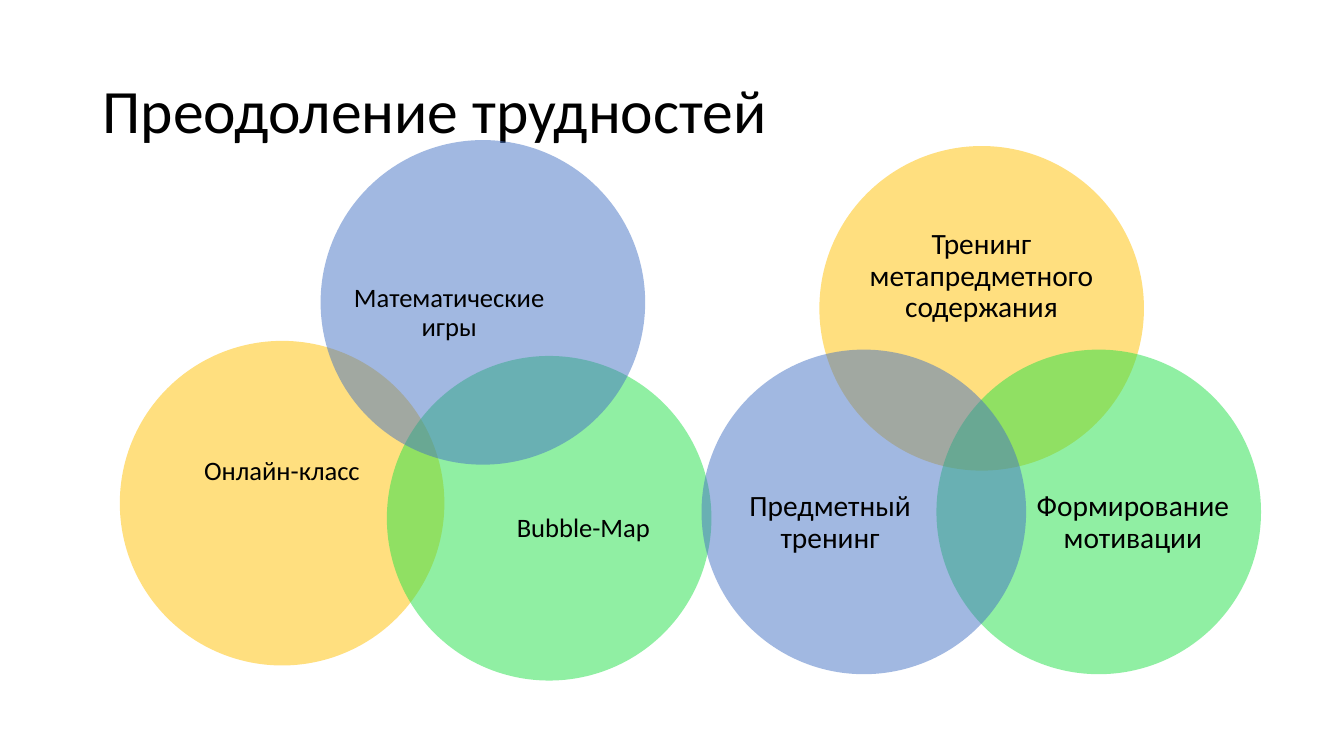
from lxml import etree
from pptx import Presentation
from pptx.dml.color import RGBColor
from pptx.enum.shapes import MSO_SHAPE
from pptx.enum.text import MSO_ANCHOR, PP_ALIGN
from pptx.oxml.ns import qn
from pptx.util import Cm, Pt

ELLIPSE = MSO_SHAPE.OVAL
MIDDLE = MSO_ANCHOR.MIDDLE
LEFT, CENTER = PP_ALIGN.LEFT, PP_ALIGN.CENTER

FONT = "Calibri"
BLACK, YELLOW, GREEN, BLUE = "000000", "FFC000", "23E148", "4472C4"
TITLE = "Преодоление трудностей"
TITLE_SIZE = 44
TITLE_AREA = (2.33, 1.01, 29.21, 3.68)

DIAMETER = 8.18
OPACITY = 50
LABEL_AREAS = {
    YELLOW: (1.09, 1.45, 5.99, 3.68),
    GREEN: (2.5, 2.12, 4.9, 4.5),
    BLUE: (0.79, 2.12, 4.9, 4.5),
}
VENNS = [
    (19, [
        ("Онлайн-класс", YELLOW, 3.02, 8.59),
        ("Bubble-Map", GREEN, 9.75, 8.97),
        ("Математические игры", BLUE, 8.08, 3.53),
    ]),
    (21, [
        ("Тренинг метапредметного содержания", YELLOW, 20.65, 3.68),
        ("Формирование мотивации", GREEN, 23.6, 8.81),
        ("Предметный тренинг", BLUE, 17.68, 8.81),
    ]),
]


def color(value):
    return RGBColor.from_string(value)


def write(frame, text, size, align):
    frame.word_wrap = True
    frame.vertical_anchor = MIDDLE
    frame.text = text
    paragraph = frame.paragraphs[0]
    paragraph.alignment = align
    paragraph.line_spacing = 0.9
    paragraph.font.name = FONT
    paragraph.font.size = Pt(size)
    paragraph.font.color.rgb = color(BLACK)


def add_circle(slide, fill, left, top):
    circle = slide.shapes.add_shape(
        ELLIPSE, Cm(left), Cm(top), Cm(DIAMETER), Cm(DIAMETER))
    circle.shadow.inherit = False
    circle.line.fill.background()
    circle.fill.solid()
    circle.fill.fore_color.rgb = color(fill)
    tint = circle._element.spPr.find(qn("a:solidFill"))[0]
    etree.SubElement(tint, qn("a:alpha"), val=str(OPACITY * 1000))


def add_label(slide, text, size, fill, left, top):
    dx, dy, width, height = LABEL_AREAS[fill]
    label = slide.shapes.add_textbox(
        Cm(left + dx), Cm(top + dy), Cm(width), Cm(height))
    frame = label.text_frame
    frame.margin_left = frame.margin_right = 0
    frame.margin_top = frame.margin_bottom = 0
    write(frame, text, size, CENTER)


def main():
    deck = Presentation()
    deck.slide_width, deck.slide_height = Cm(33.87), Cm(19.05)
    slide = deck.slides.add_slide(deck.slide_layouts[5])

    title = slide.shapes.title
    title.left, title.top, title.width, title.height = map(Cm, TITLE_AREA)
    write(title.text_frame, TITLE, TITLE_SIZE, LEFT)

    for size, circles in VENNS:
        for text, fill, left, top in circles:
            add_circle(slide, fill, left, top)
            add_label(slide, text, size, fill, left, top)

    deck.save("out.pptx")


if __name__ == "__main__":
    main()
